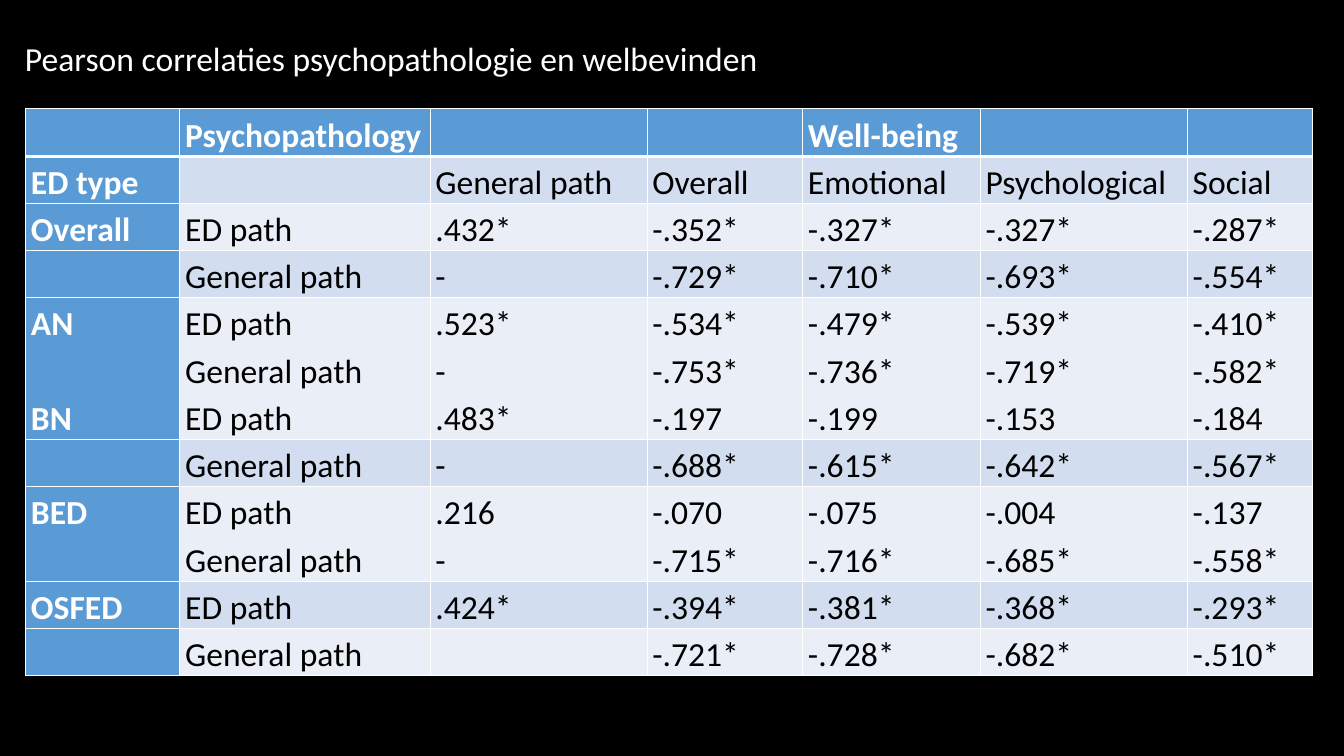
from lxml import etree
from pptx import Presentation
from pptx import util as u
from pptx.dml.color import RGBColor
from pptx.enum import text as t
from pptx.oxml import ns

COLORS = {
    "background": "000000",
    "heading": "5B9BD5",
    "band_dark": "D2DEEF",
    "band_light": "EAEFF7",
    "white": "FFFFFF",
    "black": "000000",
}
FONT_SIZE = u.Pt(32)
LINE_HEIGHT = u.Pt(45)


def add_run(paragraph, words, color, bold=False):
    run = paragraph.add_run()
    run.text = words
    run.font.name = "Calibri"
    run.font.size = FONT_SIZE
    run.font.bold = bold
    run.font.color.rgb = RGBColor.from_string(COLORS[color])


def add_border(cell, edge, points):
    line = etree.SubElement(cell._tc.get_or_add_tcPr(), ns.qn(f"a:ln{edge}"), w=str(u.Pt(points)))
    solid = etree.SubElement(line, ns.qn("a:solidFill"))
    etree.SubElement(solid, ns.qn("a:srgbClr"), val=COLORS["white"])


prs = Presentation()
prs.slide_width, prs.slide_height = u.Inches(17.78), u.Inches(10)
slide = prs.slides.add_slide(prs.slide_layouts[5])
slide.background.fill.solid()
slide.background.fill.fore_color.rgb = RGBColor.from_string(COLORS["background"])

title = slide.shapes.title
title.left, title.top = u.Inches(0.23), u.Inches(0.45)
title.width, title.height = u.Inches(10), u.Inches(0.81)
title.text_frame.word_wrap = True
title.text_frame.auto_size = t.MSO_AUTO_SIZE.NONE
title.text_frame.vertical_anchor = t.MSO_ANCHOR.TOP
heading = title.text_frame.paragraphs[0]
heading.alignment = t.PP_ALIGN.LEFT
add_run(heading, "Pearson correlaties psychopathologie en welbevinden", "white")

rows = [
    ["", "Psychopathology", "", "", "Well-being", "", ""],
    ["ED type", "", "General path", "Overall", "Emotional", "Psychological", "Social"],
    ["Overall", "ED path", ".432*", "-.352*", "-.327*", "-.327*", "-.287*"],
    ["", "General path", "-", "-.729*", "-.710*", "-.693*", "-.554*"],
    ["AN\n\nBN", "ED path\nGeneral path\nED path", ".523*\n-\n.483*", "-.534*\n-.753*\n-.197",
     "-.479*\n-.736*\n-.199", "-.539*\n-.719*\n-.153", "-.410*\n-.582*\n-.184"],
    ["", "General path", "-", "-.688*", "-.615*", "-.642*", "-.567*"],
    ["BED", "ED path\nGeneral path", ".216\n-", "-.070\n-.715*", "-.075\n-.716*",
     "-.004\n-.685*", "-.137\n-.558*"],
    ["OSFED", "ED path", ".424*", "-.394*", "-.381*", "-.368*", "-.293*"],
    ["", "General path", "", "-.721*", "-.728*", "-.682*", "-.510*"],
]
column_widths = [2.04, 3.31, 2.87, 2.06, 2.35, 2.74, 1.65]

correlations = slide.shapes.add_table(
    len(rows), len(column_widths),
    u.Inches(0.34), u.Inches(1.44), u.Inches(17.02), u.Inches(7.36)).table
correlations.first_col = True
for column, width in zip(correlations.columns, column_widths):
    column.width = u.Inches(width)

for r, values in enumerate(rows):
    line_count = values[1].count("\n") + 1
    correlations.rows[r].height = u.Inches(0.57 * line_count)
    band = "band_dark" if r % 2 else "band_light"
    for c, value in enumerate(values):
        cell = correlations.cell(r, c)
        is_heading = r == 0 or c == 0
        cell.margin_left = cell.margin_right = u.Inches(0.07)
        cell.margin_top = cell.margin_bottom = 0
        for edge, points in (("L", 1), ("R", 1), ("T", 3 if r == 1 else 1), ("B", 3 if r == 0 else 1)):
            add_border(cell, edge, points)
        cell.fill.solid()
        cell.fill.fore_color.rgb = RGBColor.from_string(COLORS["heading" if is_heading else band])

        previous = -1
        for position, words in enumerate(value.split("\n")):
            if not words:
                continue
            paragraph = cell.text_frame.paragraphs[0] if previous < 0 else cell.text_frame.add_paragraph()
            paragraph.line_spacing = 1.15
            if previous >= 0:
                paragraph.space_before = LINE_HEIGHT * (position - previous - 1)
            add_run(paragraph, words, "white" if is_heading else "black", is_heading)
            previous = position

prs.save("out.pptx")
